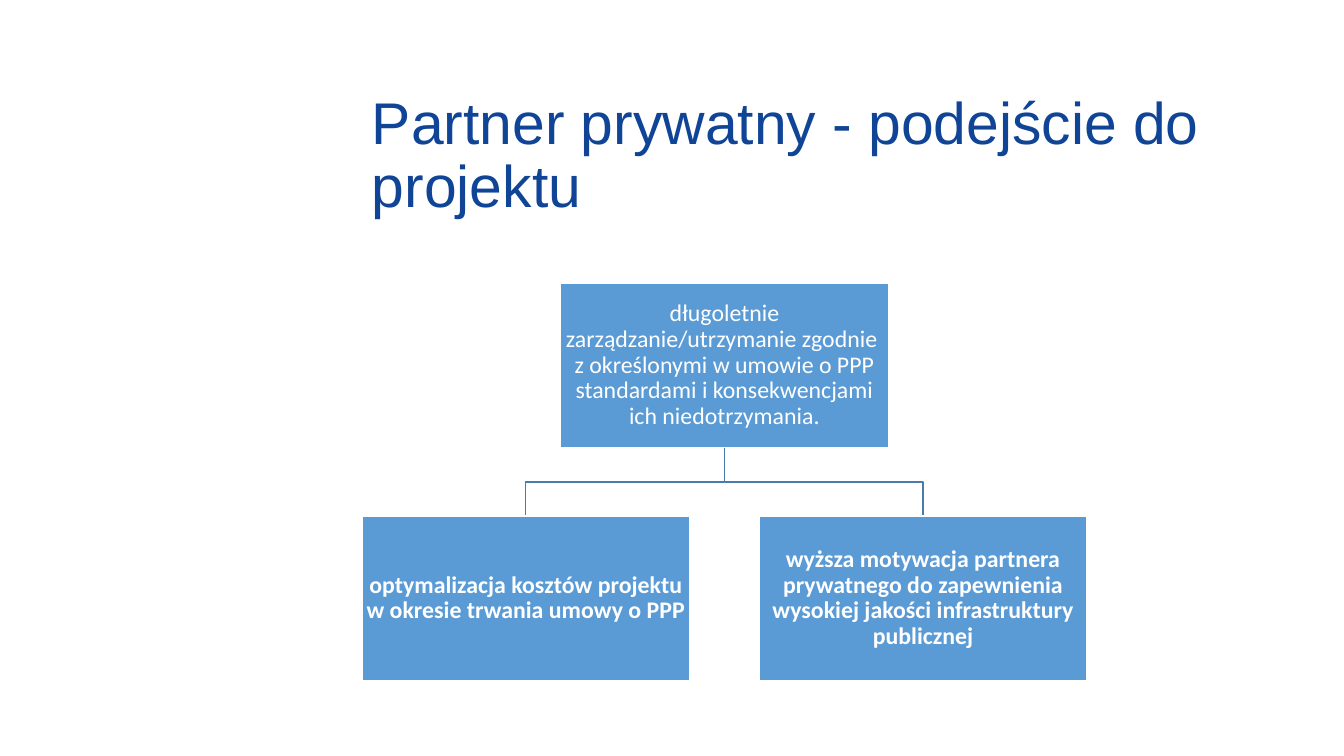
from dataclasses import dataclass

import pptx
import pptx.dml.color
import pptx.enum.shapes
import pptx.enum.text
import pptx.shapes.autoshape
import pptx.slide
import pptx.text.text
import pptx.util

SLIDE_WIDTH, SLIDE_HEIGHT = 13.33, 7.5
GRID_LEFT, GRID_TOP = 3.59, 2.81
COLUMN_STEP, ROW_STEP = 1.97, 2.31
BOX_WIDTH, BOX_HEIGHT = 3.25, 1.63
BOX_INSET = 0.01
TITLE_COLOUR, BOX_COLOUR, LINE_COLOUR, WHITE = "0F4496", "5B9BD5", "497CAB", "FFFFFF"


@dataclass(frozen=True)
class Box:
    column: int
    row: int
    lines: tuple[str, ...]
    bold: bool = False

    @property
    def left(self) -> float:
        return GRID_LEFT + self.column * COLUMN_STEP

    @property
    def top(self) -> float:
        return GRID_TOP + self.row * ROW_STEP

    @property
    def centre(self) -> float:
        return self.left + BOX_WIDTH / 2

    @property
    def bottom(self) -> float:
        return self.top + BOX_HEIGHT


PARENT = Box(1, 0, (
    "długoletnie zarządzanie/utrzymanie zgodnie ",
    "z określonymi w umowie o PPP standardami i konsekwencjami ich niedotrzymania.",
))
CHILDREN = (
    Box(0, 1, ("optymalizacja kosztów projektu w okresie trwania umowy o PPP",), True),
    Box(2, 1, ("wyższa motywacja partnera prywatnego do zapewnienia wysokiej jakości "
               "infrastruktury publicznej",), True),
)


def colour(value: str) -> pptx.dml.color.RGBColor:
    return pptx.dml.color.RGBColor.from_string(value)


def inches(*lengths: float) -> list[pptx.util.Length]:
    return [pptx.util.Inches(length) for length in lengths]


def set_line(shape: pptx.shapes.autoshape.Shape, line_colour: str) -> None:
    shape.shadow.inherit = False
    shape.line.color.rgb = colour(line_colour)
    shape.line.width = pptx.util.Pt(1)


def write_lines(frame: pptx.text.text.TextFrame, lines: tuple[str, ...], font_name: str,
                size: int, text_colour: str, bold: bool = False) -> None:
    frame.word_wrap = True
    frame.vertical_anchor = pptx.enum.text.MSO_ANCHOR.MIDDLE
    paragraph = frame.paragraphs[0]
    paragraph.line_spacing = 0.9
    for index, line in enumerate(lines):
        if index:
            paragraph.add_line_break()
        run = paragraph.add_run()
        run.text = line
        run.font.name = font_name
        run.font.size = pptx.util.Pt(size)
        run.font.bold = bold
        run.font.color.rgb = colour(text_colour)


def draw_title(slide: pptx.slide.Slide, title: str) -> None:
    shape = slide.shapes.add_textbox(*inches(GRID_LEFT, 1.26, 8.91, 0.59))
    write_lines(shape.text_frame, (title,), "Arial", 42, TITLE_COLOUR)


def draw_branch(slide: pptx.slide.Slide, parent: Box, child: Box) -> None:
    middle = (parent.bottom + child.top) / 2
    builder = slide.shapes.build_freeform(*inches(parent.centre, parent.bottom))
    corners = ((parent.centre, middle), (child.centre, middle), (child.centre, child.top))
    builder.add_line_segments([inches(*corner) for corner in corners], close=False)
    shape = builder.convert_to_shape()
    shape.fill.background()
    set_line(shape, LINE_COLOUR)


def draw_box(slide: pptx.slide.Slide, box: Box) -> None:
    shape = slide.shapes.add_shape(
        pptx.enum.shapes.MSO_SHAPE.RECTANGLE,
        *inches(box.left, box.top, BOX_WIDTH, BOX_HEIGHT))
    shape.fill.solid()
    shape.fill.fore_color.rgb = colour(BOX_COLOUR)
    set_line(shape, WHITE)
    frame = shape.text_frame
    frame.margin_left = frame.margin_right = pptx.util.Inches(BOX_INSET)
    frame.margin_top = frame.margin_bottom = pptx.util.Inches(BOX_INSET)
    write_lines(frame, box.lines, "Calibri", 17, WHITE, box.bold)
    frame.paragraphs[0].alignment = pptx.enum.text.PP_ALIGN.CENTER


def main() -> None:
    presentation = pptx.Presentation()
    presentation.slide_width, presentation.slide_height = inches(SLIDE_WIDTH, SLIDE_HEIGHT)
    slide = presentation.slides.add_slide(presentation.slide_layouts[6])
    draw_title(slide, "Partner prywatny - podejście do projektu")
    for child in CHILDREN:
        draw_branch(slide, PARENT, child)
    for box in (PARENT, *CHILDREN):
        draw_box(slide, box)
    presentation.save("out.pptx")


if __name__ == "__main__":
    main()
